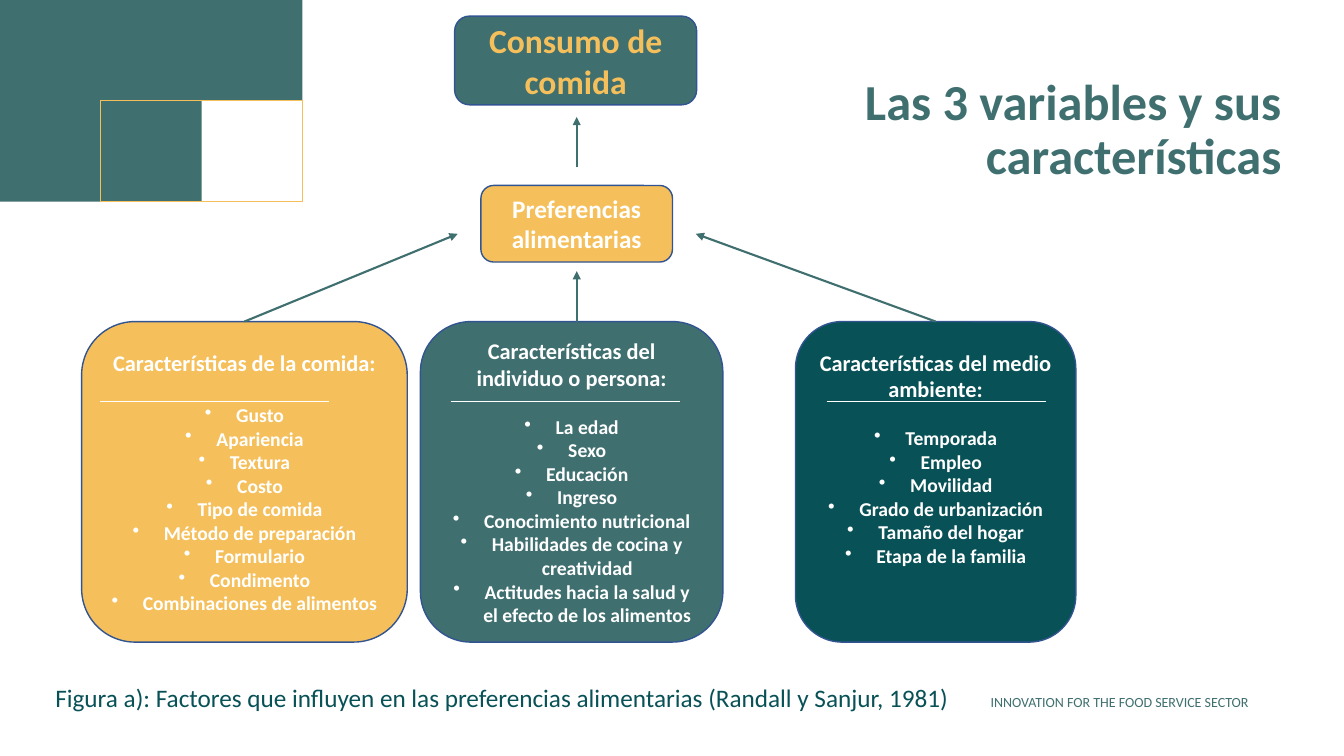
from typing import NamedTuple

from pptx import Presentation
from pptx.dml.color import RGBColor
from pptx.enum.shapes import MSO_CONNECTOR, MSO_SHAPE
from pptx.enum.text import MSO_ANCHOR, PP_ALIGN
from pptx.oxml.ns import qn
from pptx.shapes.autoshape import Shape
from pptx.shapes.connector import Connector
from pptx.util import Inches, Pt

GREEN, DARK, GOLD, WHITE, EDGE = "406F70", "085156", "F5C05B", "FFFFFF", "325491"
Point = tuple[float, float]


class Node(NamedTuple):
    left: float
    top: float
    width: float
    height: float
    fill: str
    text: str
    size: int
    color: str = WHITE


class Card(NamedTuple):
    left: float
    width: float
    fill: str
    title: str
    items: list[str]
    rule: Point
    gap: float = 17
    foot: float = 0.05


CARDS = [
    Card(0.81, 3.23, GOLD, "Características de la comida:",
         ["Gusto", "Apariencia", "Textura", "Costo", "Tipo de comida",
          "Método de preparación", "Formulario", "Condimento",
          "Combinaciones de alimentos"], (0.99, 3.26), gap=19.5),
    Card(4.17, 3, GREEN, "Características del individuo o persona:",
         ["La edad", "Sexo", "Educación", "Ingreso", "Conocimiento nutricional",
          "Habilidades de cocina y creatividad",
          "Actitudes hacia la salud y el efecto de los alimentos"], (4.47, 6.74)),
    Card(7.89, 2.78, DARK, "Características del medio ambiente:",
         ["Temporada", "Empleo", "Movilidad", "Grado de urbanización",
          "Tamaño del hogar", "Etapa de la familia"], (8.2, 10.37), foot=0.52),
]
NODES = [
    Node(4.77, 1.84, 1.9, 0.76, GOLD, "Preferencias alimentarias", 18),
    Node(4.51, 0.16, 2.4, 0.88, GREEN, "Consumo de comida", 24, GOLD),
]
TOP, TALL, RULE, MID = 3.19, 3.18, 3.98, 5.72

# Two numbers are a corner; six are a cubic curve.
LEAF = [(1.07, 0.33), (0.73, 0.33), (0.48, 0.36, 0.26, 0.44, 0.06, 0.56),
        (0, 0.6), (0, 1.75), (1.14, 1.75), (1.6, 1.7, 2.01, 1.45, 2.26, 1.09),
        (2.33, 0.98), (2.45, 0.79, 2.52, 0.57, 2.55, 0.34), (2.55, 0.33)]
FRAME = [(1.66, 1.24), (2.7, 1.24), (2.7, 1.25), (2.69, 1.4, 2.64, 1.53, 2.57, 1.65),
         (2.52, 1.72), (2.37, 1.95, 2.12, 2.1, 1.83, 2.13), (0.7, 2.13),
         (0.71, 1.97, 0.76, 1.83, 0.84, 1.71), (0.85, 1.69),
         (1.01, 1.45, 1.27, 1.28, 1.57, 1.25)]

deck = Presentation()
deck.slide_width, deck.slide_height = Inches(13.33), Inches(7.5)
slide = deck.slides.add_slide(deck.slide_layouts[6])
shapes = slide.shapes


def rgb(code: str) -> RGBColor:
    return RGBColor.from_string(code)


def paint(shape: Shape, fill: str = "", line: str = "") -> None:
    shape.shadow.inherit = False
    if fill:
        shape.fill.solid()
        shape.fill.fore_color.rgb = rgb(fill)
    else:
        shape.fill.background()
    if line:
        shape.line.color.rgb = rgb(line)
        shape.line.width = Pt(1)
    else:
        shape.line.fill.background()


def write(shape: Shape, text: str, *, size: float, color: str = WHITE,
          bold: bool = True, align: PP_ALIGN = PP_ALIGN.CENTER, space: float = 1,
          bullet: bool = False, before: float = 0) -> None:
    """Fill the empty first paragraph, or add one after the last."""
    frame = shape.text_frame
    frame.word_wrap = True
    para = frame.add_paragraph() if frame.text else frame.paragraphs[0]
    para.alignment = align
    if space != 1:
        para.line_spacing = space
    if before:
        para.space_before = Pt(before)
    if bullet:
        props = para._p.get_or_add_pPr()
        props.set("marL", str(Inches(0.31)))
        props.set("indent", str(-Inches(0.31)))
        props.makeelement(qn("a:buFont"), {})
        mark = props.makeelement(qn("a:buChar"), {"char": "•"})
        props.append(mark)
    run = para.add_run()
    run.text = text
    font = run.font
    font.name, font.size, font.bold = "Calibri", Pt(size), bold
    font.color.rgb = rgb(color)


def label(left: float, top: float, width: float, height: float) -> Shape:
    return shapes.add_textbox(Inches(left), Inches(top), Inches(width), Inches(height))


def block(left: float, top: float, width: float, height: float, fill: str) -> Shape:
    shape = shapes.add_shape(MSO_SHAPE.ROUNDED_RECTANGLE, Inches(left), Inches(top),
                             Inches(width), Inches(height))
    paint(shape, fill, EDGE)
    shape.text_frame.vertical_anchor = MSO_ANCHOR.MIDDLE
    return shape


def link(start: Point, end: Point, color: str, width: float,
         arrow: bool = False) -> Connector:
    line = shapes.add_connector(MSO_CONNECTOR.STRAIGHT, *map(Inches, start + end))
    line.line.color.rgb = rgb(color)
    line.line.width = Pt(width)
    if arrow:
        edge = line.line._get_or_add_ln()
        edge.append(edge.makeelement(qn("a:tailEnd"), {"type": "triangle"}))
    props = line._element.spPr
    props.append(props.makeelement(qn("a:effectLst"), {}))
    return line


def trace(steps: list[tuple[float, ...]], count: int = 16) -> list[Point]:
    """Turn corners and cubic curves into a list of points."""
    points = [steps[0]]
    for step in steps[1:]:
        if len(step) == 2:
            points.append(step)
            continue
        knots = [points[-1], step[:2], step[2:4], step[4:]]
        for i in range(1, count + 1):
            t = i / count
            parts = ((1 - t) ** 3, 3 * t * (1 - t) ** 2, 3 * t * t * (1 - t), t ** 3)
            points.append(tuple(sum(p * k[axis] for p, k in zip(parts, knots))
                                for axis in (0, 1)))
    return points


def leaf(steps: list[tuple[float, ...]], fill: str = "", line: str = "") -> None:
    first, *rest = trace(steps)
    form = shapes.build_freeform(*first, scale=Inches(1))
    form.add_line_segments(rest, close=True)
    paint(form.convert_to_shape(), fill, line)


def panel(card: Card) -> Shape:
    shape = block(card.left, TOP, card.width, TALL, card.fill)
    shape.text_frame.margin_bottom = Inches(card.foot)
    write(shape, card.title, size=16)
    for i, item in enumerate(card.items):
        write(shape, item, size=14, bullet=True, before=0 if i else card.gap)
    return shape


def main() -> None:
    leaf(LEAF, fill=GREEN)
    leaf(FRAME, line=GOLD)
    write(label(9.47, 6.83, 3.01, 0.27), "INNOVATION FOR THE FOOD SERVICE SECTOR",
          size=10, color=GREEN, bold=False, align=PP_ALIGN.RIGHT)
    write(label(7.87, 0.71, 4.94, 2.48), "Las 3 variables y sus características",
          size=36, color=GREEN, align=PP_ALIGN.RIGHT, space=0.9)
    food, _, place = [panel(card) for card in CARDS]
    for node in NODES:
        write(block(*node[:5]), node.text, size=node.size, color=node.color)
    write(label(0.45, 6.72, 9.92, 0.4),
          "Figura a): Factores que influyen en las preferencias alimentarias "
          "(Randall y Sanjur, 1981)",
          size=18, color=DARK, bold=False, align=PP_ALIGN.LEFT)
    for shape, start, end in [(food, 2.42, 4.54), (place, 9.28, 6.9)]:
        link((start, TOP), (end, 2.32), GREEN, 1.5, arrow=True).begin_connect(shape, 0)
    for start in (TOP, 1.66):
        link((MID, start), (MID, start - 0.5), GREEN, 1.5, arrow=True)
    for card in CARDS:
        left, right = card.rule
        link((left, RULE), (right, RULE), WHITE, 0.5)
    deck.save("out.pptx")


if __name__ == "__main__":
    main()
